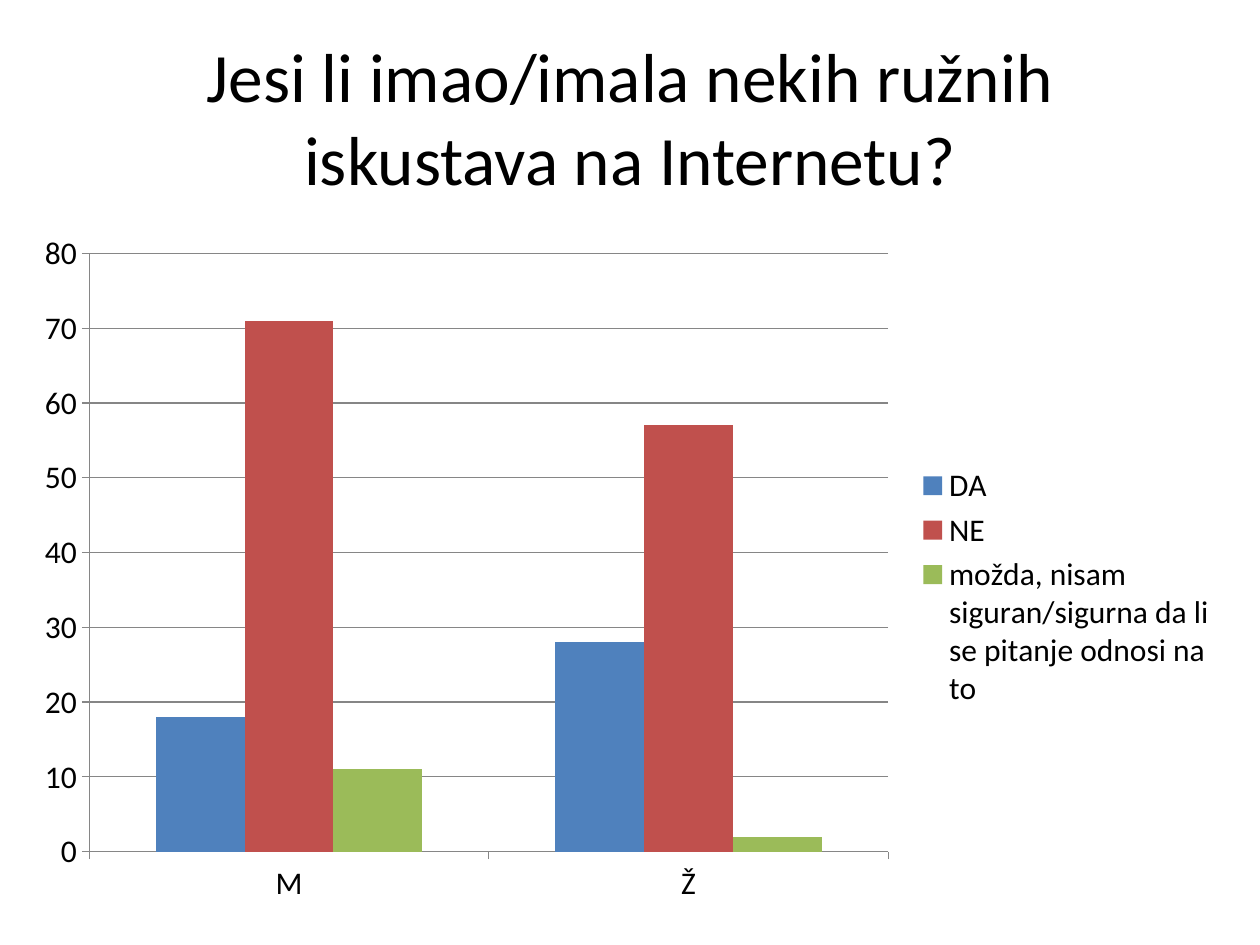
from pptx import Presentation
from pptx import util as u
from pptx.chart.data import CategoryChartData
from pptx.dml.color import RGBColor
from pptx.enum import chart as charts, text

COLOURS = {
    "text": "000000",
    "line": "868686",
    "yes": "4F81BD",
    "no": "C0504D",
    "maybe": "9BBB59",
}


class SlideBuilder:
    """Holds the style and the current slide; lengths are in points."""

    font = "Calibri"
    title_size = 39.6
    chart_size = 18

    def __init__(self, slide):
        self.slide = slide

    def colour(self, name):
        return RGBColor.from_string(COLOURS[name])

    def style_font(self, font, size):
        font.name = self.font
        font.size = u.Pt(size)
        font.bold = False
        font.color.rgb = self.colour("text")

    def style_line(self, line):
        line.color.rgb = self.colour("line")
        line.width = u.Pt(0.75)

    def title(self, words, left, top, width, height):
        shape = self.slide.shapes.title
        shape.left, shape.top = u.Pt(left), u.Pt(top)
        shape.width, shape.height = u.Pt(width), u.Pt(height)
        frame = shape.text_frame
        frame.word_wrap = True
        frame.auto_size = text.MSO_AUTO_SIZE.NONE
        frame.vertical_anchor = text.MSO_ANCHOR.MIDDLE
        paragraph = frame.paragraphs[0]
        paragraph.alignment = text.PP_ALIGN.CENTER
        run = paragraph.add_run()
        run.text = words
        self.style_font(run.font, self.title_size)

    def column_chart(self, categories, series, left, top, width, height):
        data = CategoryChartData()
        data.categories = categories
        for name, values, _ in series:
            data.add_series(name, values)
        chart = self.slide.shapes.add_chart(
            charts.XL_CHART_TYPE.COLUMN_CLUSTERED,
            u.Pt(left), u.Pt(top), u.Pt(width), u.Pt(height), data).chart
        chart.has_title = False
        self.style_font(chart.font, self.chart_size)

        # Columns
        plot = chart.plots[0]
        plot.vary_by_categories = False
        plot.gap_width = 150
        plot.overlap = 0
        for column, (_, _, colour) in zip(plot.series, series):
            column.format.fill.solid()
            column.format.fill.fore_color.rgb = self.colour(colour)

        # Axes
        for axis in (chart.category_axis, chart.value_axis):
            axis.major_tick_mark = charts.XL_TICK_MARK.OUTSIDE
            axis.minor_tick_mark = charts.XL_TICK_MARK.NONE
            self.style_line(axis.format.line)
        value_axis = chart.value_axis
        value_axis.minimum_scale, value_axis.maximum_scale = 0, 80
        value_axis.major_unit = 10
        value_axis.has_major_gridlines = True
        self.style_line(value_axis.major_gridlines.format.line)

        # Legend
        chart.has_legend = True
        chart.legend.position = charts.XL_LEGEND_POSITION.RIGHT
        chart.legend.include_in_layout = False


def main():
    presentation = Presentation()
    presentation.slide_width, presentation.slide_height = u.Pt(720), u.Pt(540)
    title_only = presentation.slide_layouts[5]
    builder = SlideBuilder(presentation.slides.add_slide(title_only))

    # Question
    builder.title("Jesi li imao/imala nekih ružnih iskustava na Internetu?",
                  36, 21.6, 648, 90)

    # Answers by gender
    builder.column_chart(
        ["M", "Ž"],
        [("DA", (18, 28), "yes"),
         ("NE", (71, 57), "no"),
         ("možda, nisam siguran/sigurna da li se pitanje odnosi na to",
          (11, 2), "maybe")],
        11.5, 126, 708.5, 397.5)

    presentation.save("out.pptx")


if __name__ == "__main__":
    main()
